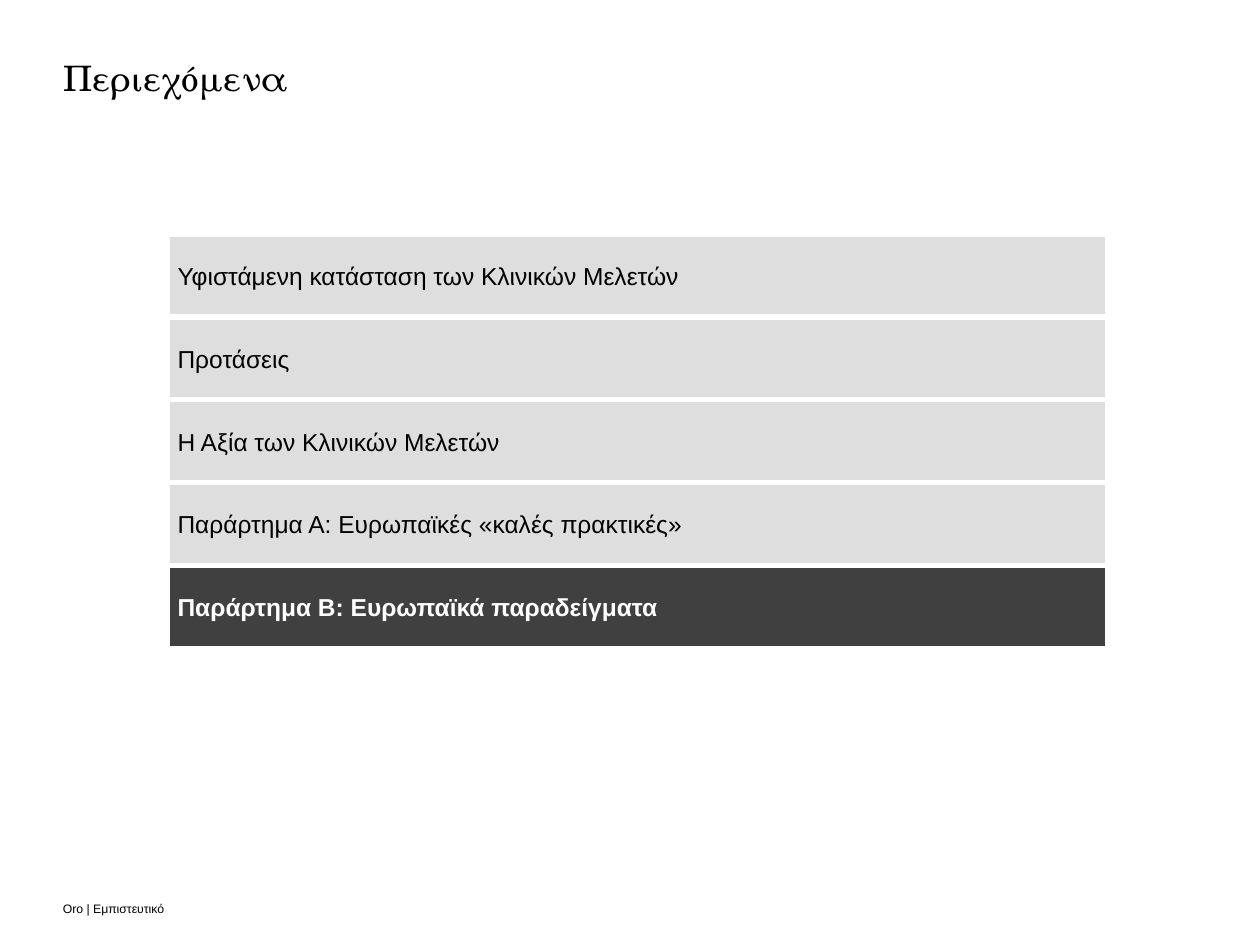
from dataclasses import dataclass

from pptx import Presentation
from pptx.dml.color import RGBColor
from pptx.enum.shapes import MSO_SHAPE
from pptx.enum.text import MSO_ANCHOR, MSO_AUTO_SIZE, PP_ALIGN
from pptx.util import Cm, Pt

RECTANGLE = MSO_SHAPE.RECTANGLE
TOP, MIDDLE, BOTTOM = MSO_ANCHOR.TOP, MSO_ANCHOR.MIDDLE, MSO_ANCHOR.BOTTOM
LEFT = PP_ALIGN.LEFT
NO_AUTOFIT = MSO_AUTO_SIZE.NONE
TITLE_ONLY = 5


@dataclass(frozen=True)
class Theme:
    heading_font: str = "TeX Gyre Schola"
    body_font: str = "Arial"
    title_size: int = 20
    section_size: int = 14
    footer_size: int = 7
    border_width: int = 3
    ink: RGBColor = RGBColor(0x00, 0x00, 0x00)
    paper: RGBColor = RGBColor(0xFF, 0xFF, 0xFF)
    section: RGBColor = RGBColor(0xDE, 0xDE, 0xDE)
    current_section: RGBColor = RGBColor(0x40, 0x40, 0x40)


class SlideBuilder:
    def __init__(self, slide, theme):
        self.slide = slide
        self.theme = theme

    def fill_text(self, box, text, font, size, color, anchor, bold=False, insets=(0, 0, 0, 0), wrap=True):
        frame = box.text_frame
        frame.text = text
        frame.auto_size = NO_AUTOFIT
        frame.word_wrap = wrap
        frame.vertical_anchor = anchor
        frame.margin_left, frame.margin_top, frame.margin_right, frame.margin_bottom = map(Cm, insets)
        para = frame.paragraphs[0]
        para.alignment = LEFT
        span = para.runs[0]
        span.font.name = font
        span.font.size = Pt(size)
        span.font.bold = bold
        span.font.color.rgb = color
        return para

    def title(self, text, left, top, width, height):
        box = self.slide.shapes.title
        box.left, box.top, box.width, box.height = map(Cm, (left, top, width, height))
        theme = self.theme
        para = self.fill_text(box, text, theme.heading_font, theme.title_size, theme.ink, TOP)
        para.line_spacing = 0.85
        para.space_before = Pt(0)

    def footer(self, text, left, top, width, height):
        box = self.slide.shapes.add_textbox(*map(Cm, (left, top, width, height)))
        theme = self.theme
        self.fill_text(box, text, theme.body_font, theme.footer_size, theme.ink, BOTTOM)

    def section_bar(self, text, left, top, width, height, current):
        theme = self.theme
        bar = self.slide.shapes.add_shape(RECTANGLE, *map(Cm, (left, top, width, height)))
        bar.shadow.inherit = False
        bar.fill.solid()
        bar.fill.fore_color.rgb = theme.current_section if current else theme.section
        bar.line.color.rgb = theme.paper
        bar.line.width = Pt(theme.border_width)
        color = theme.paper if current else theme.ink
        self.fill_text(bar, text, theme.body_font, theme.section_size, color, MIDDLE,
                       bold=current, insets=(0.2, 0.53, 0, 0.53), wrap=False)


def main():
    deck = Presentation()
    deck.slide_width, deck.slide_height = Cm(25.4), Cm(19.05)
    page = SlideBuilder(deck.slides.add_slide(deck.slide_layouts[TITLE_ONLY]), Theme())

    page.footer("Oro | Εμπιστευτικό", 1.27, 18.08, 11.05, 0.38)
    page.title("Περιεχόμενα", 1.27, 1.27, 22.86, 1.3)

    sections = [
        "Υφιστάμενη κατάσταση των Κλινικών Μελετών",
        "Προτάσεις",
        "Η Αξία των Κλινικών Μελετών",
        "Παράρτημα Α: Ευρωπαϊκές «καλές πρακτικές»",
        "Παράρτημα Β: Ευρωπαϊκά παραδείγματα",
    ]
    current = len(sections) - 1
    bar_height = 1.67
    for index, section in enumerate(sections):
        page.section_bar(section, 3.38, 4.72 + index * bar_height, 18.95, bar_height, index == current)

    deck.save("out.pptx")


if __name__ == "__main__":
    main()
